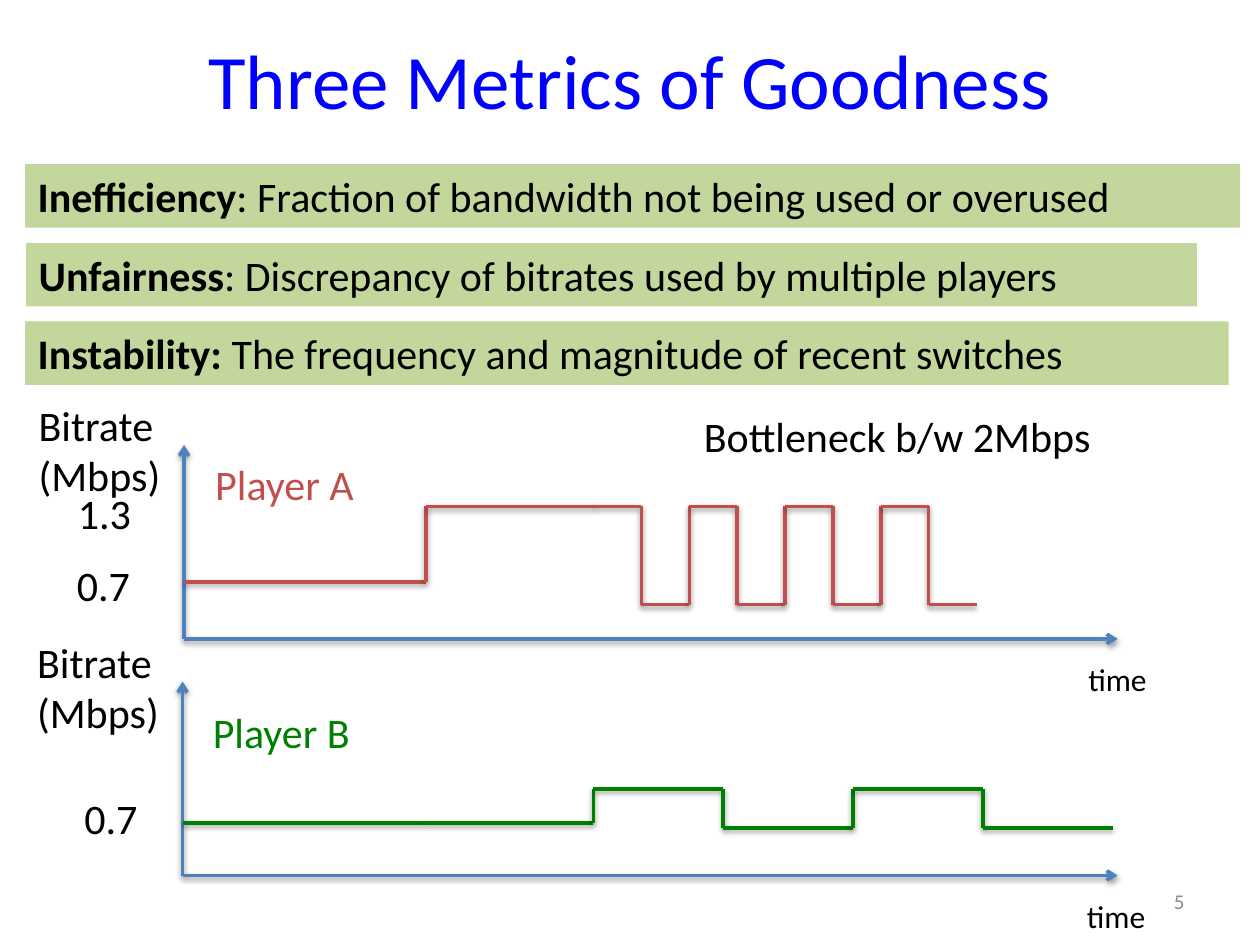
import pptx
import pptx.dml.color
import pptx.enum.shapes
import pptx.enum.text
import pptx.util
from lxml import etree
from pptx.util import Cm

COLORS = {
    "title": "0000FF",
    "text": "000000",
    "bar": "C3D69B",
    "axis": "4F81BD",
    "player_a": "C0504D",
    "player_b": "008000",
    "number": "8C8C8C",
}
ALIGN = pptx.enum.text.PP_ALIGN
ANCHOR = pptx.enum.text.MSO_ANCHOR


def rgb(name):
    return pptx.dml.color.RGBColor.from_string(COLORS[name])


def write_text(frame, text, size=24, color="text", align=ALIGN.LEFT,
               anchor=ANCHOR.TOP, wrap=True, lead=""):
    """Fill a text frame, one paragraph a line, after an optional bold lead."""
    frame.word_wrap = wrap
    frame.vertical_anchor = anchor
    for index, line in enumerate(text.split("\n")):
        paragraph = frame.paragraphs[0] if index == 0 else frame.add_paragraph()
        paragraph.alignment = align
        parts = [(lead, True)] if lead and index == 0 else []
        for words, bold in parts + [(line, False)]:
            run = paragraph.add_run()
            run.text = words
            run.font.name = "Calibri"
            run.font.size = pptx.util.Pt(size)
            run.font.bold = bold
            run.font.color.rgb = rgb(color)


class SlideBuilder:
    def __init__(self, presentation):
        self.slide = presentation.slides.add_slide(presentation.slide_layouts[5])
        self.shapes = self.slide.shapes

    def title(self, text, left, top, width, height):
        shape = self.shapes.title
        shape.left, shape.top = Cm(left), Cm(top)
        shape.width, shape.height = Cm(width), Cm(height)
        write_text(shape.text_frame, text, size=44, color="title",
                   align=ALIGN.CENTER, anchor=ANCHOR.MIDDLE)

    def bar(self, lead, text, left, top, width):
        shape = self.shapes.add_shape(
            pptx.enum.shapes.MSO_SHAPE.RECTANGLE,
            Cm(left), Cm(top), Cm(width), Cm(1.28))
        shape.shadow.inherit = False
        shape.fill.solid()
        shape.fill.fore_color.rgb = rgb("bar")
        shape.line.fill.background()
        write_text(shape.text_frame, text, lead=lead)

    def label(self, text, left, top, width, height=1.28, wrap=False, **text_format):
        box = self.shapes.add_textbox(Cm(left), Cm(top), Cm(width), Cm(height))
        write_text(box.text_frame, text, wrap=wrap, **text_format)

    def line(self, start, end, color, arrow=False):
        """Draw a straight line that keeps the soft shadow of the theme."""
        connector = self.shapes.add_connector(
            pptx.enum.shapes.MSO_CONNECTOR.STRAIGHT,
            *(Cm(length) for length in (*start, *end)))
        connector.line.color.rgb = rgb(color)
        connector.line.width = pptx.util.Pt(2)
        if arrow:
            outline = connector.line._get_or_add_ln()
            tail = etree.SubElement(outline, pptx.oxml.ns.qn("a:tailEnd"))
            tail.set("type", "arrow")

    def axes(self, left, bottom):
        self.line((left, bottom), (left, bottom - 3.91), "axis", arrow=True)
        self.line((left, bottom), (22.53, bottom), "axis", arrow=True)
        self.label("Bitrate\n(Mbps)", left - 3.18, bottom - 4.95, 3, 2.31)
        self.label("time", left + 17.98, bottom + 0.3, 1.7, 1.02, size=18)

    def trace(self, left, steps, color):
        """Draw a step line from (right end, level) pairs."""
        previous = None
        for right, level in steps:
            if previous not in (None, level):
                self.line((left, previous), (left, level), color)
            self.line((left, level), (right, level), color)
            left, previous = right, level


def main():
    presentation = pptx.Presentation()
    presentation.slide_width, presentation.slide_height = Cm(25.4), Cm(19.05)
    builder = SlideBuilder(presentation)

    builder.title("Three Metrics of Goodness", 1.27, 0, 22.86, 3.18)
    builder.bar("Inefficiency", ": Fraction of bandwidth not being used or overused",
                0.51, 3.31, 24.49)
    builder.bar("Unfairness", ": Discrepancy of bitrates used by multiple players",
                0.53, 4.9, 23.6)
    builder.bar("Instability: ", "The frequency and magnitude of recent switches",
                0.51, 6.48, 24.26)

    builder.axes(3.71, 12.88)
    builder.axes(3.68, 17.65)

    high, low, pulse = 10.21, 12.19, 0.965
    steps_a = [(8.59, 11.73), (11.99, high), (12.93, high)]
    steps_a += [(12.93 + pulse * (count + 1), high if count % 2 else low)
                for count in range(7)]
    builder.trace(3.71, steps_a, "player_a")

    high, low, pulse = 15.9, 16.69, 2.62
    steps_b = [(8.56, 16.59), (11.96, 16.59)]
    steps_b += [(11.96 + pulse * (count + 1), low if count % 2 else high)
                for count in range(4)]
    builder.trace(3.68, steps_b, "player_b")

    builder.label("Player A", 4.09, 9.12, 3.35, color="player_a")
    builder.label("Player B", 4.04, 14.12, 3.33, color="player_b")
    builder.label("1.3", 1.32, 9.7, 1.6)
    builder.label("0.7", 1.3, 11.15, 1.6)
    builder.label("0.7", 1.45, 15.85, 1.6)
    builder.label("Bottleneck b/w 2Mbps", 13.94, 8.15, 8.38)
    builder.label("5", 18.21, 17.65, 5.92, 1.02, wrap=True, size=12, color="number",
                  align=ALIGN.RIGHT, anchor=ANCHOR.MIDDLE)

    presentation.save("out.pptx")


if __name__ == "__main__":
    main()
